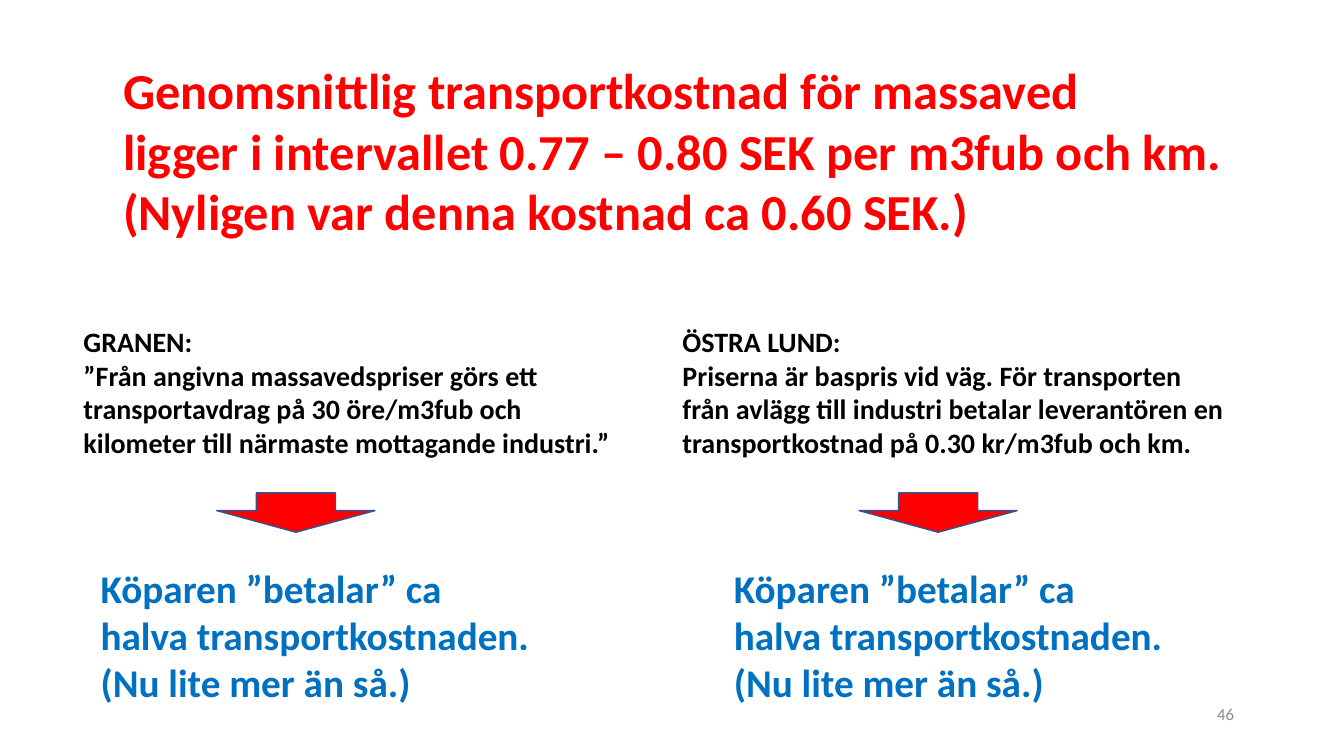
import pptx
import pptx.util
import pptx.dml.color
import pptx.enum.shapes
import pptx.enum.text
from pptx.util import Inches

RED = pptx.dml.color.RGBColor(0xFF, 0x00, 0x00)
BLUE = pptx.dml.color.RGBColor(0x00, 0x70, 0xC0)
BLACK = pptx.dml.color.RGBColor(0x00, 0x00, 0x00)
GREY = pptx.dml.color.RGBColor(0x8C, 0x8C, 0x8C)
ARROW_LINE = pptx.dml.color.RGBColor(0x32, 0x54, 0x91)

LEFT = pptx.enum.text.PP_ALIGN.LEFT
RIGHT = pptx.enum.text.PP_ALIGN.RIGHT
TOP = pptx.enum.text.MSO_ANCHOR.TOP
MIDDLE = pptx.enum.text.MSO_ANCHOR.MIDDLE

TITLE = (
    "Genomsnittlig transportkostnad för massaved\n"
    "ligger i intervallet 0.77 – 0.80 SEK per m3fub och km.\n"
    "(Nyligen var denna kostnad ca 0.60 SEK.)"
)
CONCLUSION = "Köparen ”betalar” ca\nhalva transportkostnaden.\n(Nu lite mer än så.)"

# Left edges of quote, arrow and conclusion, width of the conclusion, quote
BUYERS = [
    (0.73, 2.15, 0.9, 4.5,
     "GRANEN:\n”Från angivna massavedspriser görs ett transportavdrag på 30 öre/m3fub "
     "och kilometer till närmaste mottagande industri.”"),
    (6.67, 8.52, 7.18, 5.55,
     "ÖSTRA LUND:\nPriserna är baspris vid väg. För transporten från avlägg till industri "
     "betalar leverantören en transportkostnad på 0.30 kr/m3fub och km."),
]


def write_text(shape, text, size, color, bold=True, alignment=LEFT, anchor=TOP, wrap=True):
    frame = shape.text_frame
    frame.text = text
    frame.auto_size = pptx.enum.text.MSO_AUTO_SIZE.NONE
    frame.word_wrap = wrap
    frame.vertical_anchor = anchor
    for paragraph in frame.paragraphs:
        paragraph.alignment = alignment
        paragraph.font.name = "Calibri"
        paragraph.font.size = pptx.util.Pt(size)
        paragraph.font.bold = bold
        paragraph.font.color.rgb = color


def add_title(slide):
    title = slide.shapes.title
    title.left, title.top = Inches(1.12), Inches(0.54)
    title.width, title.height = Inches(11.21), Inches(2.52)
    write_text(title, TITLE, 36, RED, wrap=False)


def add_text(slide, left, top, width, height, *text_and_style, **options):
    box = slide.shapes.add_textbox(Inches(left), Inches(top), Inches(width), Inches(height))
    write_text(box, *text_and_style, **options)


def add_down_arrow(slide, left, top):
    arrow = slide.shapes.add_shape(
        pptx.enum.shapes.MSO_SHAPE.DOWN_ARROW,
        Inches(left), Inches(top), Inches(1.57), Inches(0.39),
    )
    arrow.adjustments[0] = 0.5
    arrow.adjustments[1] = 0.55
    arrow.shadow.inherit = False
    arrow.fill.solid()
    arrow.fill.fore_color.rgb = RED
    arrow.line.color.rgb = ARROW_LINE
    arrow.line.width = pptx.util.Pt(1)


def main():
    presentation = pptx.Presentation()
    presentation.slide_width = Inches(13.33)
    presentation.slide_height = Inches(7.5)
    title_only = presentation.slide_layouts[5]
    slide = presentation.slides.add_slide(title_only)

    add_title(slide)
    for quote_left, arrow_left, conclusion_left, conclusion_width, quote in BUYERS:
        add_text(slide, quote_left, 3.17, 5.67, 1.45, quote, 20, BLACK)
        add_down_arrow(slide, arrow_left, 4.89)
        add_text(slide, conclusion_left, 5.55, conclusion_width, 1.51, CONCLUSION, 28, BLUE)
    add_text(slide, 9.34, 6.88, 3, 0.4, "46", 12, GREY,
             bold=False, alignment=RIGHT, anchor=MIDDLE)

    presentation.save("out.pptx")


if __name__ == "__main__":
    main()
